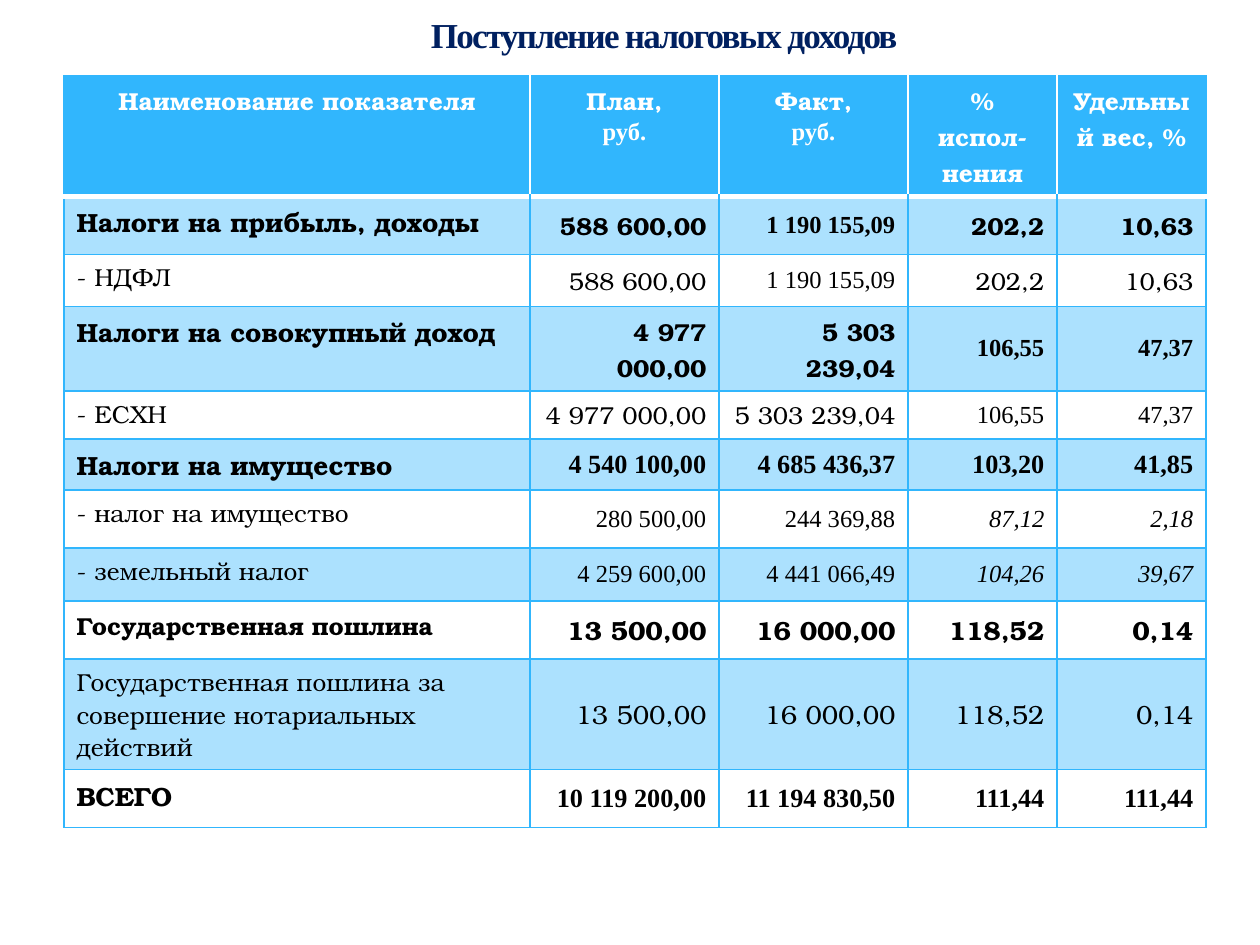
import pptx
import pptx.dml.color
import pptx.enum.text
import pptx.oxml.ns
import pptx.util
from dataclasses import dataclass
from lxml import etree

HEADING = "Поступление налоговых доходов"
HEADING_BOX = (203, 0, 922, 69)
TABLE_ORIGIN = (64, 76)
COLUMN_WIDTHS = [466, 189, 189, 149, 149]
HEADER_HEIGHT = 81
HEADER = [
    ["Наименование показателя"],
    ["План,", "руб."],
    ["Факт,", "руб."],
    ["%\vиспол-нения"],
    ["Удельный вес, %"],
]


@dataclass
class Income:
    height: int
    texts: list
    value_fonts: str
    bold: bool = False
    label_size: int = 14
    value_size: int = 14
    italic_shares: bool = False


INCOMES = [
    Income(58, ["Налоги на прибыль, доходы", "588 600,00", "1 190 155,09", "202,2", "10,63"],
           "BTBB", bold=True, label_size=15),
    Income(52, ["- НДФЛ", "588 600,00", "1 190 155,09", "202,2", "10,63"], "BTBB"),
    Income(57, ["Налоги на совокупный доход", "4 977 000,00", "5 303 239,04", "106,55", "47,37"],
           "BBTT", bold=True, label_size=15),
    Income(48, ["- ЕСХН", "4 977 000,00", "5 303 239,04", "106,55", "47,37"], "BBTT"),
    Income(51, ["Налоги на имущество", "4 540 100,00", "4 685 436,37", "103,20", "41,85"],
           "TTTT", bold=True, label_size=15, value_size=15),
    Income(58, ["- налог на имущество", "280 500,00", "244 369,88", "87,12", "2,18"],
           "TTTT", italic_shares=True),
    Income(53, ["- земельный налог", "4 259 600,00", "4 441 066,49", "104,26", "39,67"],
           "TTTT", italic_shares=True),
    Income(58, ["Государственная пошлина", "13 500,00", "16 000,00", "118,52", "0,14"],
           "BBBB", bold=True, value_size=15),
    Income(81, ["Государственная пошлина за совершение нотариальных действий",
                "13 500,00", "16 000,00", "118,52", "0,14"], "BBBB", value_size=15),
    Income(58, ["ВСЕГО", "10 119 200,00", "11 194 830,50", "111,44", "111,44"],
           "TTTT", bold=True, label_size=15, value_size=15),
]


class Theme:
    accent = "31B6FD"
    heading = "002060"
    heading_outline = "AFCCDE"
    text = "000000"
    white = "FFFFFF"
    heading_size = 20
    header_size = 14
    fonts = {"B": "TeX Gyre Bonum", "T": "Times New Roman"}
    band_opacity = 40
    outline_opacity = 25


ALIGN = pptx.enum.text.PP_ALIGN
ANCHOR = pptx.enum.text.MSO_ANCHOR


def px(length):
    return pptx.util.Emu(round(length * 914400 / 126))


def rgb(color):
    return pptx.dml.color.RGBColor.from_string(color)


def add_tag(parent, tag, **attributes):
    return etree.SubElement(parent, pptx.oxml.ns.qn(tag), attributes)


def add_line(parent, tag, color, width, opacity=100):
    line = add_tag(parent, tag, w=str(int(pptx.util.Pt(width))))
    paint = add_tag(add_tag(line, "a:solidFill"), "a:srgbClr", val=color)
    if opacity < 100:
        add_tag(paint, "a:alpha", val=str(opacity * 1000))
    return line


def style(paragraph, align, face, size, color, bold=False, italic=False):
    paragraph.alignment = align
    font = paragraph.font
    font.name = Theme.fonts[face]
    font.size = pptx.util.Pt(size)
    font.bold = bold
    font.italic = italic
    font.color.rgb = rgb(color)


def paint_cell(cell, borders, fill=None, opacity=100):
    properties = cell._tc.get_or_add_tcPr()
    for side, (color, width) in borders.items():
        add_line(properties, f"a:ln{side}", color, width)
    if fill is None:
        cell.fill.background()
        return
    cell.fill.solid()
    cell.fill.fore_color.rgb = rgb(fill)
    if opacity < 100:
        paint = properties.find(".//" + pptx.oxml.ns.qn("a:solidFill") + "[last()]")
        paint = properties.findall(pptx.oxml.ns.qn("a:solidFill"))[-1][0]
        add_tag(paint, "a:alpha", val=str(opacity * 1000))


def add_heading(slide):
    title = slide.shapes.title
    title.left, title.top, title.width, title.height = map(px, HEADING_BOX)
    title.text_frame.text = HEADING
    title.text_frame.vertical_anchor = ANCHOR.MIDDLE
    paragraph = title.text_frame.paragraphs[0]
    style(paragraph, ALIGN.CENTER, "T", Theme.heading_size, Theme.heading, bold=True)
    run_properties = paragraph.runs[0]._r.get_or_add_rPr()
    run_properties.set("spc", "-100")
    add_line(run_properties, "a:ln", Theme.heading_outline, 0.25, Theme.outline_opacity)


def fill_header(table):
    edge, rule = (Theme.accent, 1), (Theme.white, 3)
    last = len(HEADER) - 1
    for column, lines in enumerate(HEADER):
        cell = table.cell(0, column)
        cell.text_frame.text = "\n".join(lines)
        for face, paragraph in zip("BT", cell.text_frame.paragraphs):
            style(paragraph, ALIGN.CENTER, face, Theme.header_size, Theme.white, bold=True)
        borders = {"L": edge} if column == 0 else {}
        if column == last:
            borders["R"] = edge
        paint_cell(cell, {**borders, "T": edge, "B": rule}, Theme.accent)


def fill_income(table, row, income):
    edge = (Theme.accent, 1)
    top = (Theme.white, 3) if row == 1 else edge
    for column, (text, face) in enumerate(zip(income.texts, "B" + income.value_fonts)):
        cell = table.cell(row, column)
        cell.text_frame.text = text
        is_label = column == 0
        cell.vertical_anchor = ANCHOR.TOP if is_label else ANCHOR.MIDDLE
        style(cell.text_frame.paragraphs[0],
              ALIGN.LEFT if is_label else ALIGN.RIGHT, face,
              income.label_size if is_label else income.value_size, Theme.text,
              income.bold, income.italic_shares and column > 2)
        paint_cell(cell, {"L": edge, "R": edge, "T": top, "B": edge},
                   Theme.accent if row % 2 else None, Theme.band_opacity)


def add_incomes(slide):
    heights = [HEADER_HEIGHT] + [income.height for income in INCOMES]
    box = (*TABLE_ORIGIN, sum(COLUMN_WIDTHS), sum(heights))
    table = slide.shapes.add_table(len(heights), len(COLUMN_WIDTHS), *map(px, box)).table
    table.horz_banding = False
    for column, width in zip(table.columns, COLUMN_WIDTHS):
        column.width = px(width)
    for row, height in zip(table.rows, heights):
        row.height = px(height)
    fill_header(table)
    for row, income in enumerate(INCOMES, start=1):
        fill_income(table, row, income)


def main():
    deck = pptx.Presentation()
    deck.slide_width, deck.slide_height = px(1260), px(945)
    slide = deck.slides.add_slide(deck.slide_layouts[5])
    add_incomes(slide)
    add_heading(slide)
    deck.save("out.pptx")


if __name__ == "__main__":
    main()
